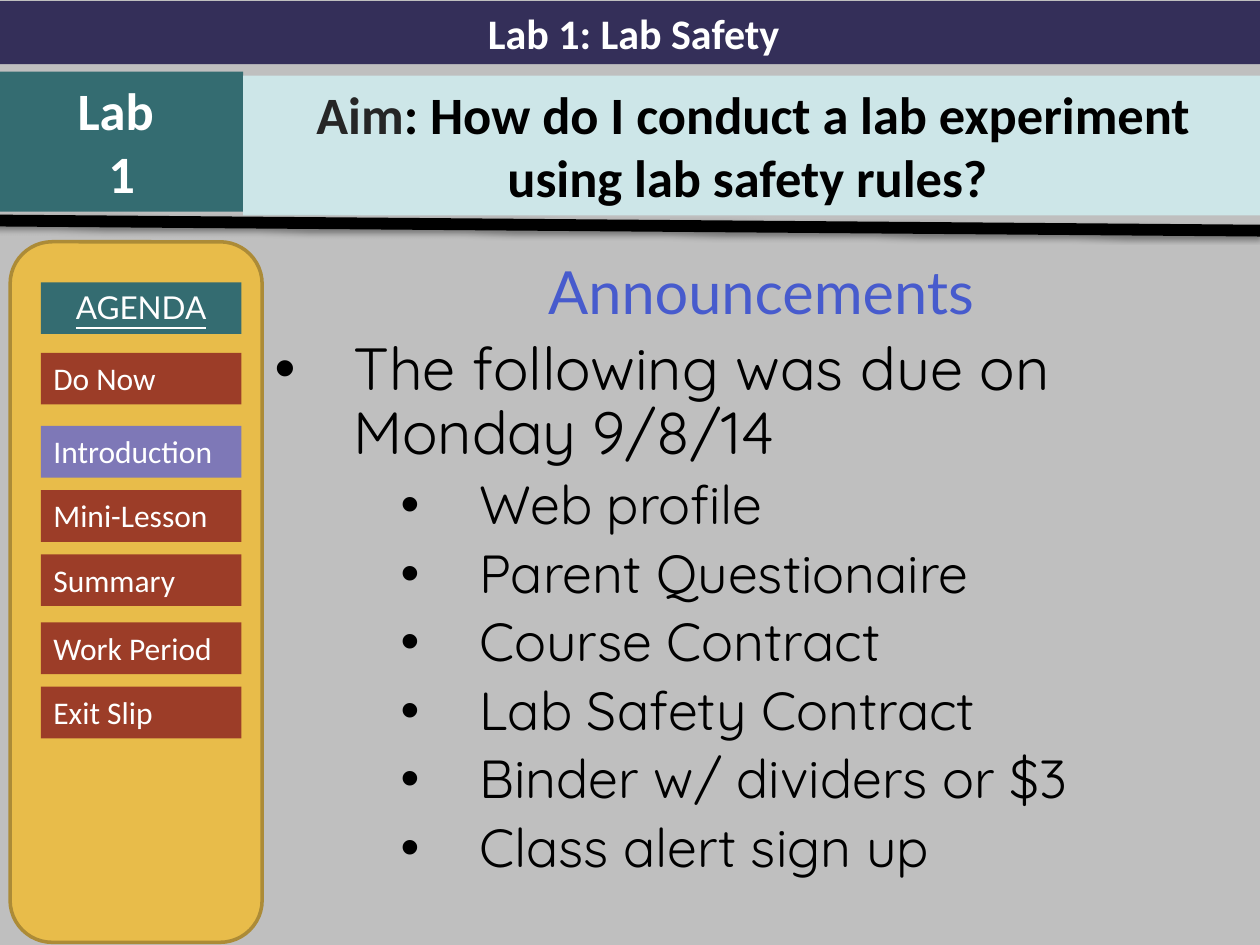
from dataclasses import dataclass

from lxml import etree
from pptx import Presentation
from pptx.dml.color import RGBColor
from pptx.enum.shapes import MSO_CONNECTOR, MSO_SHAPE
from pptx.enum.text import MSO_ANCHOR, PP_ALIGN
from pptx.oxml.ns import qn
from pptx.util import Pt

RECT, ROUNDED = MSO_SHAPE.RECTANGLE, MSO_SHAPE.ROUNDED_RECTANGLE
STRAIGHT = MSO_CONNECTOR.STRAIGHT
LEFT, CENTER = PP_ALIGN.LEFT, PP_ALIGN.CENTER
TOP = MSO_ANCHOR.TOP


@dataclass(frozen=True)
class Theme:
    """Colours, fonts and type sizes of the lesson slide."""
    background: str = "BFBFBF"
    banner: str = "342F59"
    teal: str = "346C71"
    pale_teal: str = "CDE6E8"
    gold: str = "E8BC4A"
    gold_edge: str = "AC8B37"
    brick: str = "9C3D28"
    current: str = "7E78B7"
    heading: str = "475BCD"
    charcoal: str = "262626"
    black: str = "000000"
    white: str = "FFFFFF"
    label_font: str = "Calibri"
    heading_font: str = "Lato"
    body_font: str = "Quicksand"
    body_size: float = 34
    detail_size: float = 30.6
    aim_size: float = 30
    banner_size: float = 24
    agenda_size: float = 18


THEME = Theme()
AGENDA = [("Do Now", 201.6), ("Introduction", 243.4), ("Mini-Lesson", 280.1),
          ("Summary", 316.8), ("Work Period", 355.7), ("Exit Slip", 392.4)]
CURRENT_STEP = "Introduction"
DUE_ITEMS = ["Web profile", "Parent Questionaire", "Course Contract",
             "Lab Safety Contract", "Binder w/ dividers or $3", "Class alert sign up"]


def add_run(paragraph, text, size, color=THEME.white, font=THEME.label_font,
            bold=False, underline=False):
    """Append one styled run to a paragraph."""
    run = paragraph.add_run()
    run.text = text
    run.font.name = font
    run.font.size = Pt(size)
    run.font.bold = bold
    run.font.underline = underline
    run.font.color.rgb = RGBColor.from_string(color)


def add_panel(shapes, box, fill, edge=None, preset=RECT):
    """Draw a filled shape, with an edge if a colour is given."""
    panel = shapes.add_shape(preset, *map(Pt, box))
    panel.shadow.inherit = False
    panel.fill.solid()
    panel.fill.fore_color.rgb = RGBColor.from_string(fill)
    if edge:
        panel.line.color.rgb = RGBColor.from_string(edge)
        panel.line.width = Pt(2)
    else:
        panel.line.fill.background()
    return panel


def add_label(shapes, box, fill, lines, align=CENTER):
    """Draw a filled box; each line is a list of run settings."""
    frame = add_panel(shapes, box, fill).text_frame
    frame.word_wrap = True
    frame.vertical_anchor = TOP
    for index, runs in enumerate(lines):
        paragraph = frame.add_paragraph() if index else frame.paragraphs[0]
        paragraph.alignment = align
        for run in runs:
            add_run(paragraph, **run)


def add_divider(shapes, start, end):
    """Draw the heavy rule with its soft shadow below the aim."""
    divider = shapes.add_connector(STRAIGHT, *map(Pt, start + end))
    divider.line.color.rgb = RGBColor.from_string(THEME.black)
    divider.line.width = Pt(6.75)
    effects = etree.SubElement(divider._element.spPr, qn("a:effectLst"))
    shadow = etree.SubElement(effects, qn("a:outerShdw"), blurRad=str(Pt(3.1)),
                              dist=str(Pt(1.6)), dir="5400000", rotWithShape="0")
    color = etree.SubElement(shadow, qn("a:srgbClr"), val=THEME.black)
    etree.SubElement(color, qn("a:alpha"), val="38000")


def set_bullet(paragraph, level, margin):
    """Give a paragraph a round bullet on a hanging indent."""
    paragraph.level = level
    properties = paragraph._p.get_or_add_pPr()
    properties.set("marL", str(Pt(margin)))
    properties.set("indent", str(Pt(-45)))
    etree.SubElement(properties, qn("a:buFont"), typeface="Arial")
    etree.SubElement(properties, qn("a:buChar"), char="•")


def add_announcements(shapes):
    """Write the announcements heading and its bulleted list."""
    frame = shapes.add_textbox(Pt(149.8), Pt(146.9), Pt(570.2), Pt(393.1)).text_frame
    frame.word_wrap = True
    entries = [("Announcements", THEME.body_size, None),
               ("The following was due on Monday 9/8/14", THEME.body_size, 0)]
    entries += [(item, THEME.detail_size, 1) for item in DUE_ITEMS]
    for index, (text, size, level) in enumerate(entries):
        paragraph = frame.add_paragraph() if index else frame.paragraphs[0]
        paragraph.line_spacing = 0.9
        paragraph.space_before = Pt(round(size * 0.2, 1))
        if level is None:
            paragraph.alignment = CENTER
            add_run(paragraph, text, size, THEME.heading, THEME.heading_font)
        else:
            set_bullet(paragraph, level, 45 + 72 * level)
            add_run(paragraph, text, size, THEME.black, THEME.body_font)


def add_header(shapes):
    """Draw the title banner, the lab number and the aim."""
    add_label(shapes, (0, 0.7, 724.3, 36), THEME.banner,
              [[dict(text="Lab 1: Lab Safety", size=THEME.banner_size, bold=True)]])
    aim_style = dict(size=THEME.aim_size, bold=True)
    add_label(shapes, (0, 41, 139, 80), THEME.teal,
              [[dict(text=text, **aim_style)] for text in ("Lab ", "1")])
    question = ": How do I conduct a lab experiment using lab safety rules? "
    add_label(shapes, (139, 43.2, 583.2, 80), THEME.pale_teal,
              [[dict(text="Aim", color=THEME.charcoal, **aim_style),
                dict(text=question, color=THEME.black, **aim_style)]])


def add_agenda(shapes):
    """Draw the agenda panel with the current step highlighted."""
    agenda = shapes.add_group_shape().shapes
    add_panel(agenda, (5.8, 138.2, 144, 400.3), THEME.gold, THEME.gold_edge, ROUNDED)
    add_label(agenda, (23.4, 161.3, 114.5, 29.5), THEME.teal,
              [[dict(text="AGENDA", size=THEME.agenda_size,
                     font=THEME.heading_font, underline=True)]])
    for step, top in AGENDA:
        fill = THEME.current if step == CURRENT_STEP else THEME.brick
        add_label(agenda, (23.4, top, 114.5, 29.5), fill,
                  [[dict(text=step, size=THEME.agenda_size)]], LEFT)


def main():
    """Build the lab safety slide and save it."""
    deck = Presentation()
    deck.slide_width, deck.slide_height = Pt(720), Pt(540)
    slide = deck.slides.add_slide(deck.slide_layouts[6])
    slide.background.fill.solid()
    slide.background.fill.fore_color.rgb = RGBColor.from_string(THEME.background)
    add_announcements(slide.shapes)
    add_header(slide.shapes)
    add_divider(slide.shapes, (-3.6, 126), (720, 131.8))
    add_agenda(slide.shapes)
    deck.save("out.pptx")


if __name__ == "__main__":
    main()
